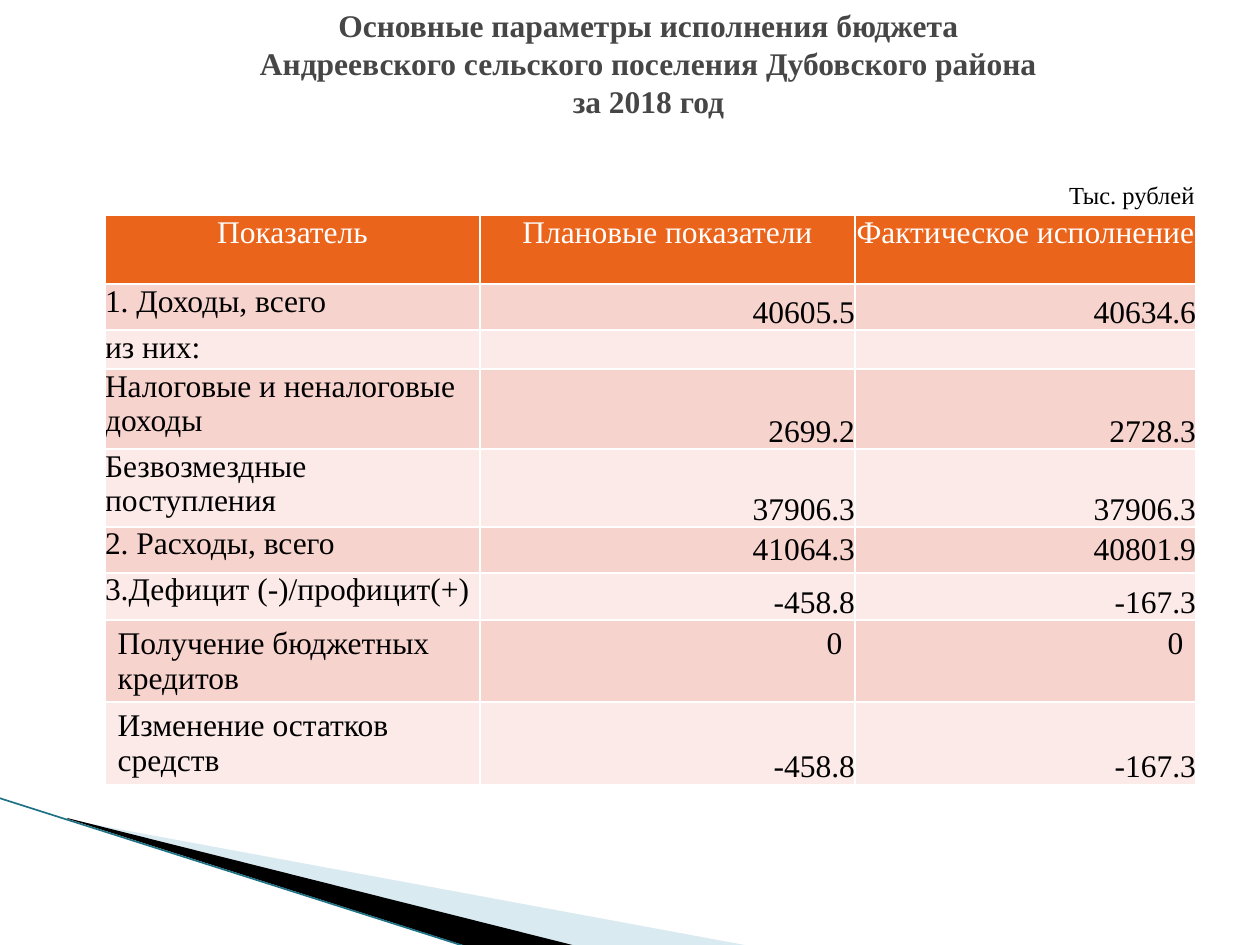
from lxml import etree
from pptx import Presentation
from pptx import util as u
from pptx.dml.color import RGBColor
from pptx.enum import shapes, text
from pptx.oxml import ns

SCALE = 914400 / 126
LEFT, CENTER, RIGHT = text.PP_ALIGN.LEFT, text.PP_ALIGN.CENTER, text.PP_ALIGN.RIGHT
TOP, MIDDLE, BOTTOM = text.MSO_ANCHOR.TOP, text.MSO_ANCHOR.MIDDLE, text.MSO_ANCHOR.BOTTOM


def px(n):
    return u.Emu(round(n * SCALE))


def rgb(value):
    return RGBColor.from_string(value)


def write(tf, content, size=18, color="000000", bold=False, align=LEFT, spacing=None):
    p = tf.paragraphs[0]
    p.alignment = align
    if spacing:
        p.line_spacing = spacing
    p.text = content
    for r in p.runs:
        r.font.name = "Times New Roman"
        r.font.size = u.Pt(size)
        r.font.bold = bold
        r.font.color.rgb = rgb(color)


class Deck:
    font_color = "464646"
    header_fill = "EB641B"
    bands = ("F7D3CD", "FBEAE8")

    def __init__(self, width, height):
        self.prs = Presentation()
        self.prs.slide_width, self.prs.slide_height = px(width), px(height)
        self.s = self.prs.slides.add_slide(self.prs.slide_layouts[5])

    def title(self, content, x, y, w, h):
        sp = self.s.shapes.title
        sp.left, sp.top, sp.width, sp.height = map(px, (x, y, w, h))
        sp.text_frame.vertical_anchor = MIDDLE
        write(sp.text_frame, content, color=self.font_color, bold=True,
              align=CENTER, spacing=u.Pt(21.7))

    def label(self, content, x, y, w, h):
        tf = self.s.shapes.add_textbox(*map(px, (x, y, w, h))).text_frame
        tf.word_wrap = True
        write(tf, content, size=14, align=RIGHT)

    def polygon(self, points, fill, alpha=None):
        builder = self.s.shapes.build_freeform(*points[0], scale=SCALE)
        builder.add_line_segments(points[1:])
        sp = builder.convert_to_shape()
        sp.shadow.inherit = False
        sp.line.fill.background()
        sp.fill.solid()
        sp.fill.fore_color.rgb = rgb(fill)
        if alpha:
            clr = sp._element.spPr.find(".//" + ns.qn("a:srgbClr"))
            etree.SubElement(clr, ns.qn("a:alpha"), val=str(alpha * 1000))

    def line(self, x1, y1, x2, y2, color, width):
        c = self.s.shapes.add_connector(shapes.MSO_CONNECTOR.STRAIGHT,
                                        *map(px, (x1, y1, x2, y2)))
        c.line.color.rgb = rgb(color)
        c.line.width = u.Pt(width)
        etree.SubElement(c._element.spPr, ns.qn("a:effectLst"))

    def cell(self, cell, content, fill, anchor=TOP, padded=False, **style):
        cell.fill.solid()
        cell.fill.fore_color.rgb = rgb(fill)
        cell.vertical_anchor = anchor
        if not padded:
            cell.margin_left = cell.margin_right = 0
            cell.margin_top = cell.margin_bottom = 0
        write(cell.text_frame, content, **style)

    def table(self, header, rows, x, y, widths, heights):
        table = self.s.shapes.add_table(
            len(heights), len(widths), px(x), px(y),
            px(sum(widths)), px(sum(heights))).table
        for column, w in zip(table.columns, widths):
            column.width = px(w)
        for row, h in zip(table.rows, heights):
            row.height = px(h)
        for j, name in enumerate(header):
            self.cell(table.cell(0, j), name, self.header_fill,
                      color="FFFFFF", align=CENTER)
        for i, (name, values, anchor, name_padded, value_padded) in enumerate(rows, 1):
            fill = self.bands[(i - 1) % 2]
            self.cell(table.cell(i, 0), name, fill, padded=name_padded)
            for j, value in enumerate(values, 1):
                self.cell(table.cell(i, j), value, fill, anchor, value_padded,
                          align=RIGHT, spacing=None if value_padded else 1.15)


HEADER = ("Показатель", "Плановые показатели", "Фактическое исполнение")
ROWS = (
    ("1. Доходы, всего", ("40605.5", "40634.6"), BOTTOM, False, False),
    ("из них:", ("", ""), TOP, False, False),
    ("Налоговые и неналоговые доходы", ("2699.2", "2728.3"), BOTTOM, False, False),
    ("Безвозмездные поступления", ("37906.3", "37906.3"), BOTTOM, False, False),
    ("2. Расходы, всего", ("41064.3", "40801.9"), TOP, False, False),
    ("3.Дефицит (-)/профицит(+)", ("-458.8", "-167.3"), BOTTOM, False, False),
    ("Получение бюджетных кредитов", ("0", "0"), TOP, True, True),
    ("Изменение остатков средств", ("-458.8", "-167.3"), BOTTOM, True, False),
)


def main():
    deck = Deck(1260, 945)
    deck.polygon([(69, 820), (750, 946), (575, 946), (69, 819)], "A0CBDC", alpha=40)
    deck.polygon([(67, 818), (576, 946), (469, 947), (68, 819)], "000000")
    deck.line(-1, 798, 467, 947, "1F7285", 0.95)
    deck.table(HEADER, ROWS, 105, 215, (375, 375, 341),
               (69, 46, 39, 80, 78, 46, 47, 82, 82))
    deck.title("Основные параметры исполнения бюджета\v"
               "Андреевского сельского поселения Дубовского района\v"
               "за 2018 год", 94, 0, 1109, 125)
    deck.label("Тыс. рублей", 930, 174, 277, 43)
    deck.prs.save("out.pptx")


if __name__ == "__main__":
    main()
